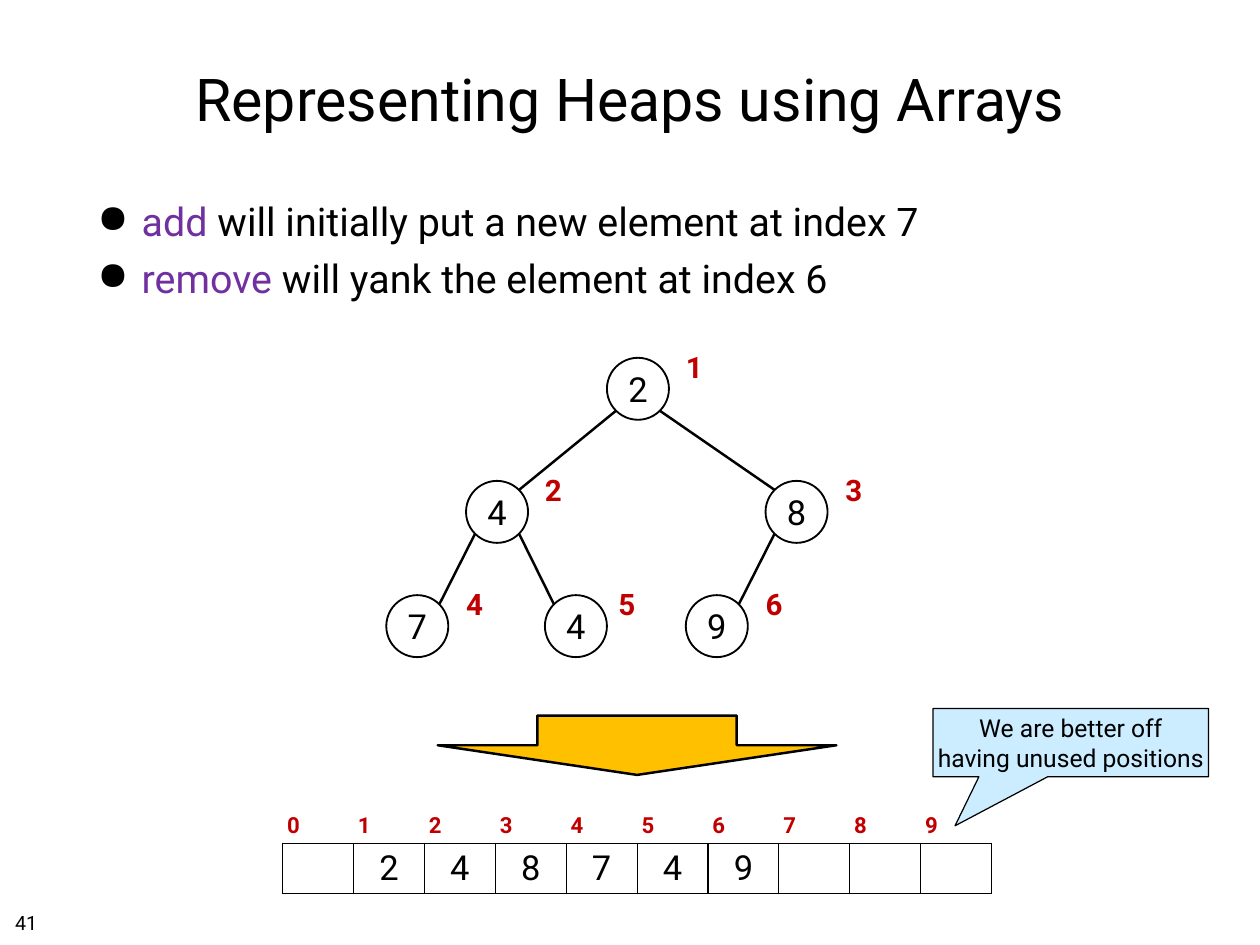
"""Build the slide on representing heaps using arrays."""
from lxml.etree import SubElement
from pptx import Presentation
from pptx.dml.color import RGBColor
from pptx.enum.shapes import MSO_CONNECTOR as CONN, MSO_SHAPE as SHAPE
from pptx.enum.text import MSO_ANCHOR as ANCHOR, PP_ALIGN as ALIGN
from pptx.oxml.ns import qn
from pptx.util import Inches, Pt

BLACK, RED, PURPLE = "000000", "C00000", "7030A0"
TITLE = "Representing Heaps using Arrays"
BULLETS = [("add", " will initially put a new element at index 7"),
           ("remove", " will yank the element at index 6")]
CALLOUT = "We are better off\vhaving unused positions"
PAGE = "41"
# heap index: (value, node left, node top, label left)
NODES = {1: ("2", 6.85, 4.04, 7.64), 2: ("4", 5.26, 5.43, 6.05),
         3: ("8", 8.64, 5.43, 9.44), 4: ("7", 4.36, 6.72, 5.16),
         5: ("4", 6.15, 6.72, 6.88), 6: ("9", 7.74, 6.72, 8.54)}
SLOTS = 10
NODE, LABEL_RISE = 0.7, 0.2
TABLE_LEFT, TABLE_TOP, COL, ROWS = 3.19, 9.12, 0.8, (0.39, 0.56)


def color(value):
    return RGBColor.from_string(value)


def box(*lengths):
    return [Inches(v) for v in lengths]


def set_font(r, size, value=BLACK, bold=False):
    for name, v in {"name": "Roboto", "size": Pt(size), "bold": bold}.items():
        setattr(r.font, name, v)
    r.font.color.rgb = color(value)


def set_frame(tf, inset=0.06, anchor=ANCHOR.MIDDLE, wrap=True):
    frame = {"margin_left": Inches(inset), "margin_right": Inches(inset),
             "margin_top": Inches(inset), "margin_bottom": Inches(inset),
             "vertical_anchor": anchor, "word_wrap": wrap}
    for name, v in frame.items():
        setattr(tf, name, v)


def write(tf, text, size, value=BLACK, bold=False, align=ALIGN.CENTER):
    p = tf.paragraphs[0]
    p.text, p.alignment = text, align
    for r in p.runs:
        set_font(r, size, value, bold)


def add_shape(s, kind, at, width, fill=None):
    sp = s.shapes.add_shape(kind, *box(*at))
    sp.shadow.inherit = False
    if fill:
        sp.fill.solid()
        sp.fill.fore_color.rgb = color(fill)
    else:
        sp.fill.background()
    sp.line.color.rgb = color(BLACK)
    sp.line.width = Pt(width)
    return sp


def add_label(s, at, text, size, value=BLACK, bold=False, inset=0.06, align=ALIGN.CENTER):
    tf = s.shapes.add_textbox(*box(*at)).text_frame
    set_frame(tf, inset, ANCHOR.TOP, False)
    write(tf, text, size, value, bold, align)


def add_bullets(s):
    tf = s.shapes.add_textbox(*box(1.04, 2.17, 12.14, 1.5)).text_frame
    set_frame(tf, anchor=ANCHOR.TOP)
    for i, (word, rest) in enumerate(BULLETS):
        p = tf.add_paragraph() if i else tf.paragraphs[0]
        p.space_before = Pt(8)
        for text, value in ((word, PURPLE), (rest, BLACK)):
            r = p.add_run()
            r.text = text
            set_font(r, 32, value)
        pPr = p._p.get_or_add_pPr()
        pPr.set("marL", str(Inches(0.5)))
        pPr.set("indent", str(-Inches(0.5)))
        SubElement(SubElement(pPr, qn("a:buClr")), qn("a:srgbClr"), val=BLACK)
        SubElement(pPr, qn("a:buChar"), char="●")


def add_edge(s, parent, child):
    side = 1 if child % 2 else -1
    half, reach = NODE / 2, 0.25
    _, px, py, _ = NODES[parent]
    _, cx, cy, _ = NODES[child]
    line = s.shapes.add_connector(CONN.STRAIGHT, *box(
        px + half + side * reach, py + half + reach,
        cx + half - side * reach, cy + half - reach))
    line.line.color.rgb = color(BLACK)
    line.line.width = Pt(2)
    SubElement(line._element.spPr, qn("a:effectLst"))


def add_tree(s):
    for child in list(NODES)[1:]:
        add_edge(s, child // 2, child)
    for index, (value, left, top, label_left) in NODES.items():
        sp = add_shape(s, SHAPE.OVAL, (left, top, NODE, NODE), 1.5)
        set_frame(sp.text_frame)
        write(sp.text_frame, value, 28)
        add_label(s, (label_left, top - LABEL_RISE, 0.39, 0.5), str(index), 24, RED, True, 0.1)


def add_borders(cell, sides):
    tcPr = cell._tc.get_or_add_tcPr()
    for side in sides:
        ln = SubElement(tcPr, qn(f"a:ln{side}"), w=str(Pt(1)))
        SubElement(SubElement(ln, qn("a:solidFill")), qn("a:srgbClr"), val=BLACK)


def add_array(s):
    table = s.shapes.add_table(2, SLOTS, *box(TABLE_LEFT, TABLE_TOP, SLOTS * COL, sum(ROWS))).table
    table.first_row = table.horz_banding = False
    for row, height in zip(table.rows, ROWS):
        row.height = Inches(height)
    for i in range(SLOTS):
        table.columns[i].width = Inches(COL)
        head, slot = table.cell(0, i), table.cell(1, i)
        for cell, sides, anchor in ((head, "B", ANCHOR.BOTTOM), (slot, "LRTB", ANCHOR.MIDDLE)):
            add_borders(cell, sides)
            cell.fill.background()
            cell.vertical_anchor = anchor
            cell.margin_left = cell.margin_top = cell.margin_bottom = Inches(0.05)
            cell.margin_right = Inches(0.05 if cell is slot else 0.1)
        write(head.text_frame, str(i), 18, RED, True, ALIGN.LEFT)
        if i in NODES:
            write(slot.text_frame, NODES[i][0], 28)


def main():
    prs = Presentation()
    prs.slide_width, prs.slide_height = box(14.22, 10.67)
    s = prs.slides.add_slide(prs.slide_layouts[5])
    title = s.shapes.title
    title.left, title.top, title.width, title.height = box(1.04, 0.28, 12.14, 1.64)
    set_frame(title.text_frame)
    write(title.text_frame, TITLE, 48)
    add_bullets(s)
    add_array(s)
    add_tree(s)
    add_shape(s, SHAPE.DOWN_ARROW, (4.94, 8.08, 4.5, 0.67), 2, "FFC000")
    note = add_shape(s, SHAPE.RECTANGULAR_CALLOUT, (10.53, 8, 3.11, 0.77), 1, "CCECFF")
    note.adjustments[0], note.adjustments[1] = -0.42, 1.22
    set_frame(note.text_frame, 0.05, wrap=False)
    write(note.text_frame, CALLOUT, 20)
    add_label(s, (0.11, 10.23, 0.37, 0.35), PAGE, 16, align=ALIGN.LEFT)
    prs.save("out.pptx")


if __name__ == "__main__":
    main()
